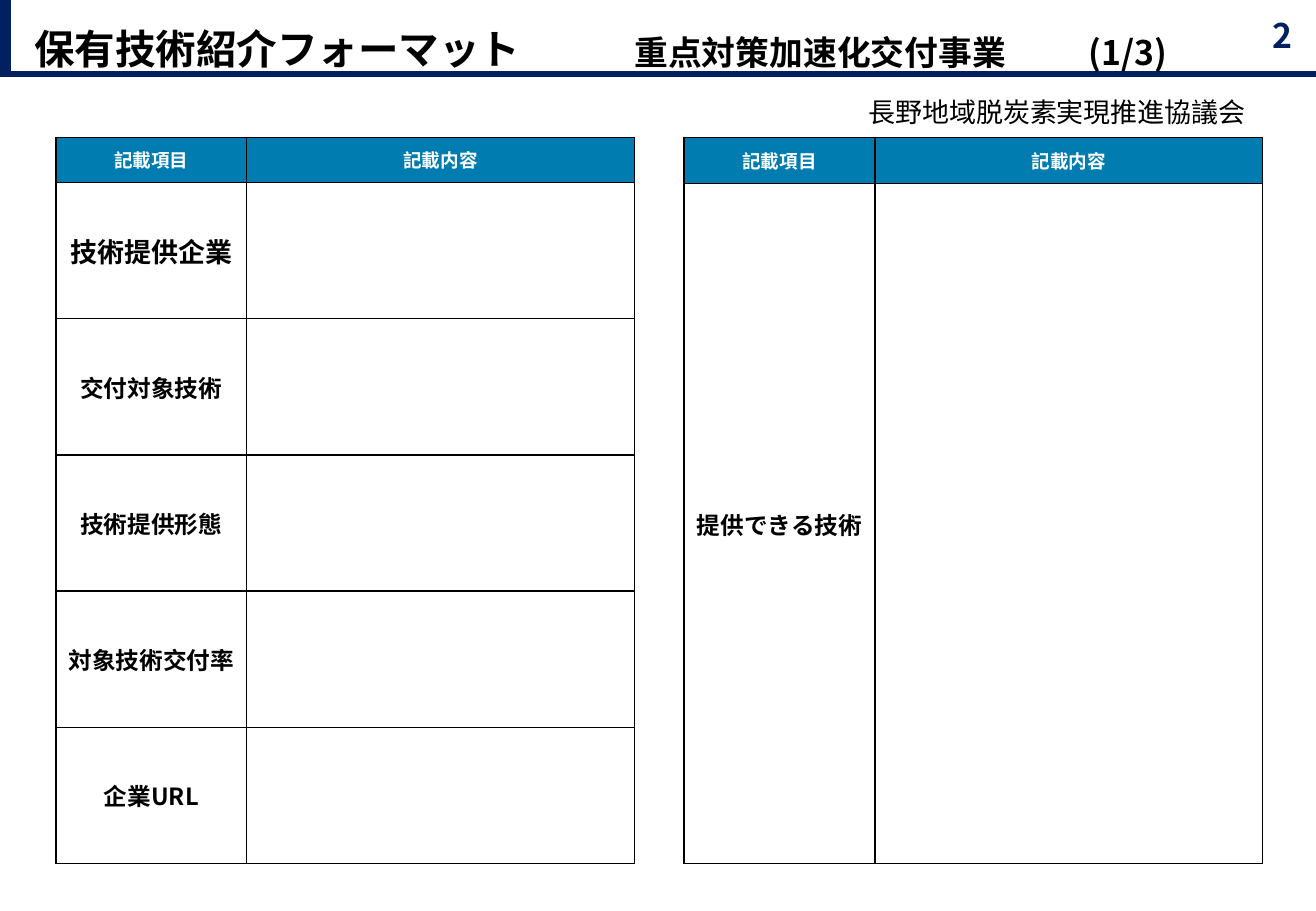
from dataclasses import dataclass

from lxml import etree
from pptx import Presentation
from pptx.dml.color import RGBColor
from pptx.enum.shapes import MSO_CONNECTOR
from pptx.enum.text import MSO_ANCHOR, PP_ALIGN
from pptx.oxml.ns import qn
from pptx.util import Inches, Pt

STRAIGHT = MSO_CONNECTOR.STRAIGHT
TOP, MIDDLE = MSO_ANCHOR.TOP, MSO_ANCHOR.MIDDLE
LEFT, CENTER, RIGHT = PP_ALIGN.LEFT, PP_ALIGN.CENTER, PP_ALIGN.RIGHT
TITLE_ONLY = 5


@dataclass(frozen=True)
class Theme:
    navy: str = "002060"
    header: str = "007CB0"
    white: str = "FFFFFF"
    ink: str = "000000"
    font: str = "Noto Sans CJK JP"
    caption_font: str = "Arial"
    title: int = 24
    large: int = 20
    medium: int = 16
    label: int = 14
    small: int = 11
    rule: float = 3.5
    bar: float = 7
    border: float = 1


THEME = Theme()


@dataclass(frozen=True)
class Box:
    left: int
    top: int
    width: int
    height: int

    def inner(self, left, top, width, height):
        """Return an inner box, given in percent of this one."""
        return Box(self.left + round(self.width * left / 100),
                   self.top + round(self.height * top / 100),
                   round(self.width * width / 100),
                   round(self.height * height / 100))

    def place(self):
        return self.left, self.top, self.width, self.height


def write(frame, text, size, color=THEME.ink, align=LEFT, bold=True,
          font=THEME.font, tab=None):
    """Fill a text frame with one styled paragraph; tab is an optional stop."""
    para = frame.paragraphs[0]
    para.text = text
    para.alignment = align
    if tab:
        stops = etree.SubElement(para._p.get_or_add_pPr(), qn("a:tabLst"))
        etree.SubElement(stops, qn("a:tab"), pos=str(tab), algn="l")
    for span in para.runs:
        span.font.name = font
        span.font.size = Pt(size)
        span.font.bold = bold
        span.font.color.rgb = RGBColor.from_string(color)
        east_asian = etree.SubElement(span.font._element, qn("a:ea"))
        east_asian.set("typeface", THEME.font)


def add_text(page, box, text, size, wrap=True, anchor=MIDDLE, side=0.1, **style):
    frame = page.shapes.add_textbox(*box.place()).text_frame
    frame.word_wrap = wrap
    frame.vertical_anchor = anchor
    frame.margin_left = frame.margin_right = Inches(side)
    write(frame, text, size, **style)


def add_rule(page, start, end, width):
    line = page.shapes.add_connector(STRAIGHT, *start, *end)
    line.line.color.rgb = RGBColor.from_string(THEME.navy)
    line.line.width = Pt(width)
    etree.SubElement(line._element.spPr, qn("a:effectLst"))


def add_header(page, band):
    bottom = band.top + band.height
    bar_x = band.left + round(band.width * 0.0037)
    add_rule(page, (band.left, bottom), (band.left + band.width, bottom), THEME.rule)
    add_rule(page, (bar_x, band.top), (bar_x, bottom), THEME.bar)

    title = page.shapes.title
    title.left, title.top, title.width, title.height = band.inner(
        1.66, 14.75, 97.5, 100).place()
    title.text_frame.vertical_anchor = MIDDLE
    write(title.text_frame, "保有技術紹介フォーマット", THEME.title)

    add_text(page, band.inner(89.75, 14.75, 9.33, 65.57), "2", THEME.large,
             color=THEME.navy, align=RIGHT)
    add_text(page, band.inner(48.2, 37, 42.5, 66),
             "重点対策加速化交付事業\t(1/3)", THEME.large, side=0,
             tab=round(band.width * 0.3453))


def style_cell(cell, fill):
    cell.fill.solid()
    cell.fill.fore_color.rgb = RGBColor.from_string(fill)
    cell.vertical_anchor = MIDDLE
    cell.margin_left = cell.margin_right = Inches(0.04)
    cell.margin_top = cell.margin_bottom = Inches(0.04)
    properties = cell._tc.get_or_add_tcPr()
    for index, side in enumerate(("a:lnL", "a:lnR", "a:lnT", "a:lnB")):
        edge = etree.Element(qn(side), w=str(Pt(THEME.border)))
        paint = etree.SubElement(edge, qn("a:solidFill"))
        etree.SubElement(paint, qn("a:srgbClr"), val=THEME.ink)
        properties.insert(index, edge)


def add_form(page, box, items, header_share):
    """Draw a two-column entry form; items are (label, type size) pairs."""
    rows = len(items) + 1
    table = page.shapes.add_table(rows, 2, *box.place()).table
    for column, share in zip(table.columns, (0.33, 0.67)):
        column.width = round(box.width * share)
    header_height = round(box.height * header_share)
    for index, row in enumerate(table.rows):
        row.height = ((box.height - header_height) // len(items)
                      if index else header_height)
        for cell in row.cells:
            style_cell(cell, THEME.white if index else THEME.header)
    for column, heading in enumerate(("記載項目", "記載内容")):
        write(table.cell(0, column).text_frame, heading, THEME.small,
              color=THEME.white, align=CENTER)
    for index, (label, size) in enumerate(items, start=1):
        write(table.cell(index, 0).text_frame, label, size, align=CENTER)


def build_format_page(deck):
    page = deck.slides.add_slide(deck.slide_layouts[TITLE_ONLY])
    sheet = Box(0, 0, deck.slide_width, deck.slide_height)
    add_header(page, sheet.inner(0, 0, 100, 8.13))
    add_text(page, sheet.inner(65.1, 9.87, 30.84, 4.93),
             "長野地域脱炭素実現推進協議会", THEME.medium, wrap=False,
             anchor=TOP, bold=False, font=THEME.caption_font)
    company_items = [("技術提供企業", THEME.medium)] + [
        (label, THEME.label)
        for label in ("交付対象技術", "技術提供形態", "対象技術交付率", "企業URL")]
    technology_items = [("提供できる技術", THEME.label)]
    forms = ((4.25, company_items, 0.062), (51.99, technology_items, 0.064))
    for left, items, header_share in forms:
        add_form(page, sheet.inner(left, 15.07, 43.95, 79.73), items, header_share)


def main():
    deck = Presentation()
    deck.slide_width, deck.slide_height = Inches(10.83), Inches(7.5)
    build_format_page(deck)
    deck.save("out.pptx")


if __name__ == "__main__":
    main()
